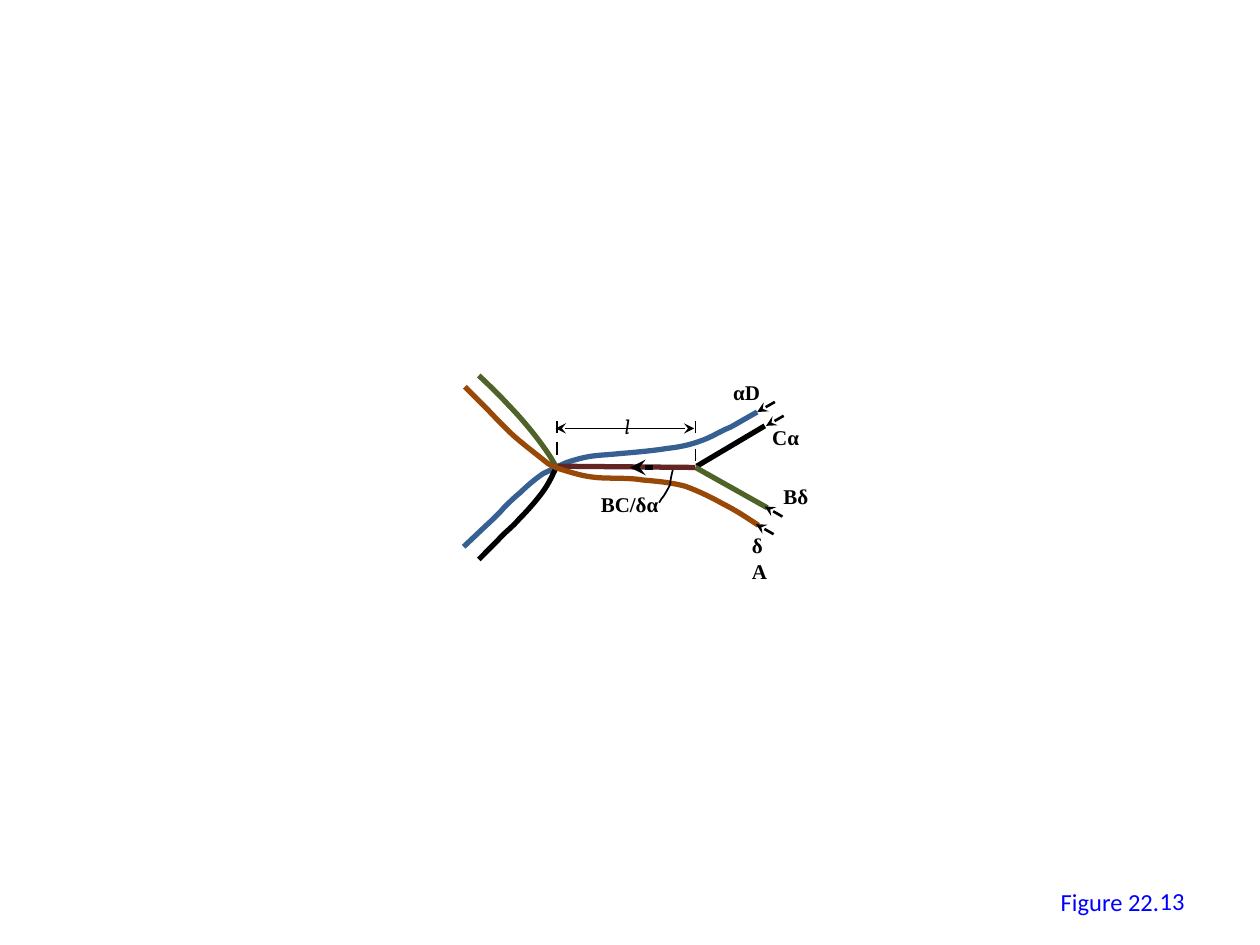
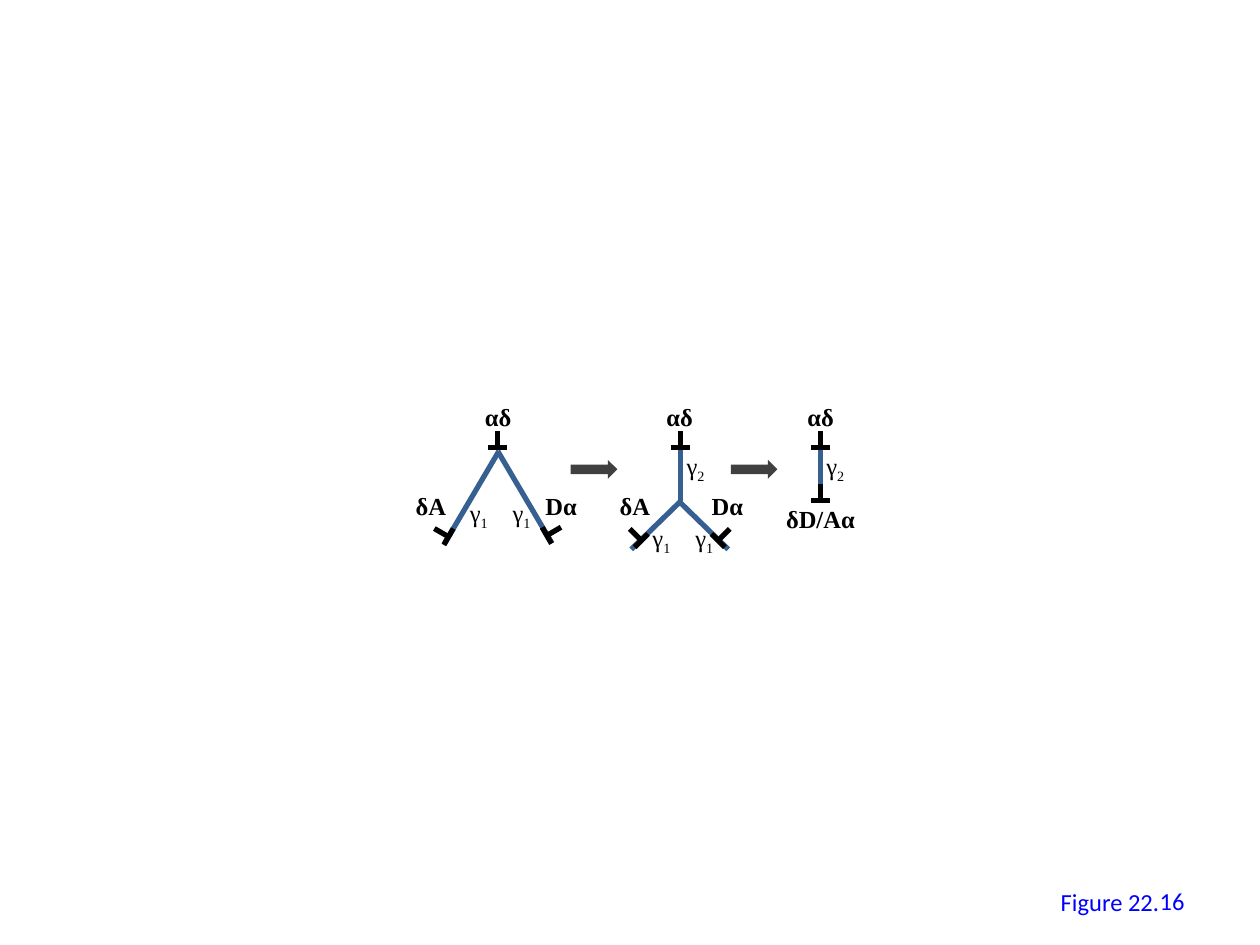
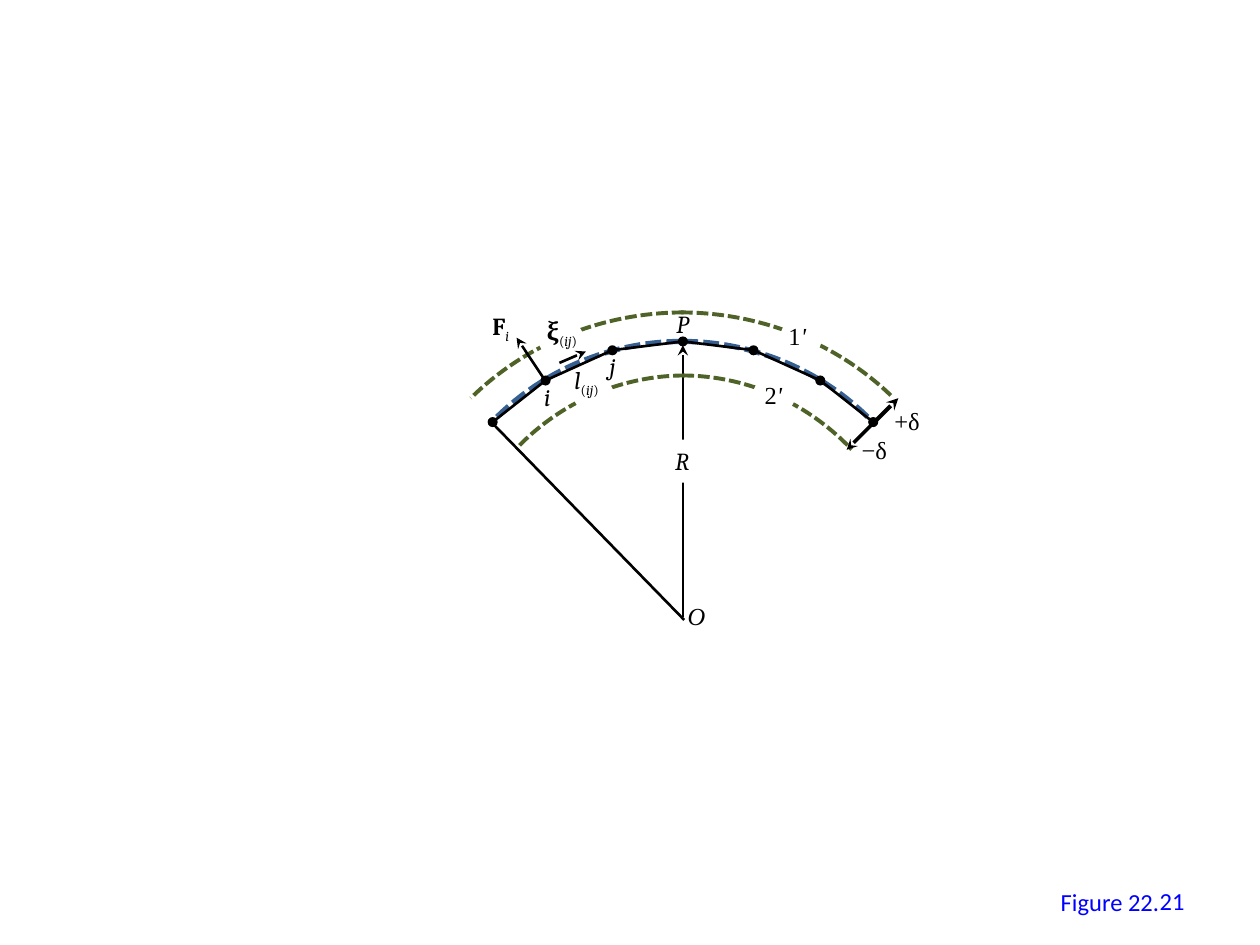
from math import cos, radians, sin

from lxml.etree import SubElement
from pptx import Presentation
from pptx.dml.color import RGBColor
from pptx.enum.dml import MSO_LINE
from pptx.enum.shapes import MSO_CONNECTOR, MSO_SHAPE
from pptx.enum.text import MSO_ANCHOR, MSO_AUTO_SIZE, PP_ALIGN
from pptx.oxml.ns import qn
from pptx.util import Pt

PX = 9144  # EMU; 100 px to the inch
COLORS = {
    "black": "000000", "white": "FFFFFF", "caption": "0000FF", "blue": "376092",
    "green": "4F6228", "brown": "984807", "maroon": "632523", "gray": "404040",
}
TIMES, CAMBRIA, CALIBRI = "Times New Roman", "Cambria", "Calibri"


def color(name):
    return RGBColor.from_string(COLORS[name])


def style_line(line, name, width):
    line.color.rgb = color(name)
    line.width = Pt(width)


def add_line(s, x1, y1, x2, y2, name="black", width=1.5, arrows=()):
    """Straight line; arrows holds "headEnd" (start) and/or "tailEnd" (end)."""
    sp = s.shapes.add_connector(MSO_CONNECTOR.STRAIGHT, *(round(v * PX) for v in (x1, y1, x2, y2)))
    style_line(sp.line, name, width)
    spPr = sp._element.spPr
    for end in arrows:
        SubElement(spPr.find(qn("a:ln")), qn("a:" + end), type="stealth")
    SubElement(spPr, qn("a:effectLst"))
    return sp


def add_arrow(s, x1, y1, x2, y2, width=1.5):
    return add_line(s, x1, y1, x2, y2, width=width, arrows=["tailEnd"])


def add_polyline(s, points, name, width):
    fb = s.shapes.build_freeform(*points[0], scale=PX)
    fb.add_line_segments(points[1:], close=False)
    sp = fb.convert_to_shape()
    sp.shadow.inherit = False
    sp.fill.background()
    style_line(sp.line, name, width)
    return sp


def add_curve(s, points, name, width=3):
    """Bezier chain: a start, then triples of points; a leftover point is a straight end."""
    sp = add_polyline(s, points, name, width)
    segments = list(sp._element.iter(qn("a:lnTo")))
    for i in range(0, len(segments) - 2, 3):
        first, *others = segments[i:i + 3]
        first.tag = qn("a:cubicBezTo")
        for other in others:
            first.append(other[0])
            other.getparent().remove(other)


def add_solid(s, kind, x, y, w, h, name, rotation=0):
    sp = s.shapes.add_shape(kind, x * PX, y * PX, w * PX, h * PX)
    sp.shadow.inherit = False
    sp.fill.solid()
    sp.fill.fore_color.rgb = color(name)
    sp.line.fill.background()
    sp.rotation = rotation


def add_arc(s, x, y, w, h, end, name, width, mirrored=False):
    sp = s.shapes.add_shape(MSO_SHAPE.ARC, x * PX, y * PX, w * PX, h * PX)
    sp.shadow.inherit = False
    sp.fill.background()
    style_line(sp.line, name, width)
    sp.line.dash_style = MSO_LINE.SQUARE_DOT
    sp.adjustments[0], sp.adjustments[1] = 162, end
    if mirrored:
        sp._element.spPr.find(qn("a:xfrm")).set("flipH", "1")


def add_text(s, x, y, w, h, runs, size=14, font=TIMES, name="black", wrap=False):
    """Text box; runs are (text, flags) with b bold, i italic, _ subscript."""
    sp = s.shapes.add_textbox(x * PX, y * PX, w * PX, h * PX)
    tf = sp.text_frame
    tf.word_wrap = wrap
    tf.auto_size = MSO_AUTO_SIZE.NONE if wrap else MSO_AUTO_SIZE.SHAPE_TO_FIT_TEXT
    for text, flags in runs:
        r = tf.paragraphs[0].add_run()
        r.text = text
        r.font.name, r.font.size = font, Pt(size)
        r.font.color.rgb = color(name)
        r.font.bold, r.font.italic = "b" in flags, "i" in flags
        if "_" in flags:
            r.font._element.set("baseline", "-25000")
    return sp


def add_tee(s, x, y, angle):
    """T mark with its bar centred on x, y and its stem pointing along angle."""
    dx, dy = cos(radians(angle)), sin(radians(angle))
    add_line(s, x + 7.5 * dy, y - 7.5 * dx, x - 7.5 * dy, y + 7.5 * dx, width=3)
    add_line(s, x, y, x + 13 * dx, y + 13 * dy, width=3)


def add_slide(prs, number):
    s = prs.slides.add_slide(prs.slide_layouts[6])
    add_text(s, 832, 699, 99, 34, [("Figure 22.", "")], font=CALIBRI, name="caption")
    tf = add_text(s, 717, 695, 233, 40, [(number, "")], font=CALIBRI, name="caption",
                  wrap=True).text_frame
    tf.vertical_anchor = MSO_ANCHOR.MIDDLE
    tf.paragraphs[0].alignment = PP_ALIGN.RIGHT
    return s


def build_junction(prs):
    s = add_slide(prs, "13")
    add_curve(s, [(601, 327), (594, 331), (587, 335), (580, 339), (572, 342), (565, 347), (556, 350),
                  (548, 353), (539, 355), (529, 356), (518, 358), (492, 360), (492, 360),
                  (483, 361), (478, 361), (470, 362), (463, 363), (456, 365), (450, 367),
                  (443, 370), (437, 373), (431, 376), (425, 380), (418, 386), (413, 391),
                  (408, 395), (404, 399), (400, 403), (396, 408), (386, 417), (386, 417),
                  (368, 434)], "blue")
    add_line(s, 607, 338, 553, 370, width=3)
    add_curve(s, [(441, 372), (438, 378), (436, 383), (431, 390), (426, 397), (418, 406), (412, 412),
                  (406, 419), (400, 423), (395, 429), (390, 434), (380, 444), (380, 444)], "black")
    add_line(s, 609, 403, 552, 371, "green", 3)
    add_line(s, 552, 371, 442, 370, "maroon", 3)
    add_curve(s, [(441, 370), (438, 364), (434, 358), (428, 350), (422, 342), (412, 330), (404, 322),
                  (396, 313), (380, 298), (380, 298)], "green")
    add_curve(s, [(602, 417), (593, 411), (584, 405), (574, 400), (565, 395), (555, 390), (544, 386),
                  (533, 383), (522, 382), (510, 381), (499, 379), (483, 380), (473, 379),
                  (463, 378), (457, 376), (450, 374), (444, 372), (442, 372), (435, 368),
                  (429, 363), (417, 354), (409, 347), (401, 340), (387, 325), (387, 325),
                  (369, 307)], "brown")

    add_line(s, 441, 340, 551, 340, width=1, arrows=["headEnd", "tailEnd"])
    for x, y in [(442, 334), (552, 334), (442, 351), (552, 356)]:
        add_line(s, x, y + 10, x, y, width=1)
    for x, y, dy in [(601, 327, -8), (608, 338, -8), (607, 402, 8), (600, 416, 8)]:
        add_arrow(s, x + 14, y + dy, x, y)
    add_arrow(s, 518, 371, 500, 371, 3)
    add_curve(s, [(534, 373), (533, 377), (532, 381), (532, 384), (531, 387), (530, 388), (529, 390),
                  (528, 392), (526, 395), (525, 396), (524, 398), (523, 399), (523, 399)],
              "black", 1)

    add_text(s, 486, 323, 29, 30, [("l", "i")], 12, CAMBRIA)
    for x, y, w, label in [(572, 296, 42, "αD"), (612, 379, 40, "Bδ"), (603, 332, 42, "Cα"),
                           (587, 418, 40, "δA"), (467, 385, 66, "BC/δα")]:
        add_text(s, x, y, w, 30, [(label, "b")], 12, wrap=label == "δA")


def build_splitting(prs):
    s = add_slide(prs, "16")
    for ends in [(540, 355, 540, 398), (651, 386, 651, 355), (396, 358, 353, 431),
                 (395, 358, 438, 431), (540, 398, 501, 436), (539, 398, 578, 436)]:
        add_line(s, *ends, "blue", 3)
    for x, y, angle in [(395, 355, -90), (540, 355, -90), (651, 355, -90), (651, 397, -90),
                        (356, 426, -150), (434, 425, -30), (509, 429, -135), (570, 429, -45)]:
        add_tee(s, x, y, angle)
    for x in (453, 580):
        add_solid(s, MSO_SHAPE.RIGHT_ARROW, x, 365, 37, 15, "gray")
    for x, y, index in [(363, 390, "1"), (397, 390, "1"), (508, 410, "1"), (542, 410, "1"),
                        (535, 353, "2"), (646, 353, "2")]:
        add_text(s, x, y, 35, 34, [("γ", ""), (index, "_")])
    for x, y, w, label in [(375, 314, 41, "αδ"), (519, 314, 41, "αδ"), (631, 314, 41, "αδ"),
                           (320, 385, 44, "δA"), (482, 385, 44, "δA"), (614, 395, 75, "δD/Aα"),
                           (555, 385, 45, "Dα"), (423, 385, 45, "Dα")]:
        add_text(s, x, y, w, 34, [(label, "b")])


def build_arc(prs):
    s = add_slide(prs, "21")
    half = [(56, 278), (109, 302), (151, 335)]
    nodes = ([(542 - dx, y) for dx, y in reversed(half)] + [(542, 271)]
             + [(542 + dx, y) for dx, y in half])

    add_arc(s, 331, 271, 421, 421, 189.84, "blue", 3)
    add_arc(s, 331, 271, 421, 421, 189.63, "blue", 3, mirrored=True)
    add_arrow(s, 542, 490, 542, 274)
    add_line(s, 388, 333, 543, 492)
    for x, y in nodes:
        add_solid(s, MSO_SHAPE.OVAL, x - 4, y - 4, 8, 8, "black")
    add_arrow(s, 693, 336, 713, 316, 2.25)
    add_arc(s, 352, 298, 379, 398, 188.27, "green", 2.25)
    add_arc(s, 354, 298, 379, 398, 187.98, "green", 2.25, mirrored=True)
    add_arc(s, 307, 248, 467, 440, 190.73, "green", 2.25)
    add_arc(s, 309, 248, 467, 440, 190.81, "green", 2.25, mirrored=True)
    add_polyline(s, nodes, "black", 1.5)
    add_arrow(s, 692, 337, 672, 357, 2)
    add_arrow(s, 444, 288, 465, 279)

    for x, y, w, h, rotation in [(423, 245, 35, 31, 330.6), (456, 302, 35, 31, 59.1),
                                 (620, 257, 33, 19, 22.8), (598, 304, 33, 19, 27.5)]:
        add_solid(s, MSO_SHAPE.RECTANGLE, x, y, w, h, "white", rotation)
    add_arrow(s, 432, 301, 410, 268)

    radius = add_text(s, 526, 349, 37, 34, [("R", "i")], font=CAMBRIA)
    radius.fill.solid()
    radius.fill.fore_color.rgb = color("white")
    pair = [("(", "_"), ("ij", "i_"), (")", "_")]
    for x, y, w, runs in [(527, 240, 37, [("P", "i")]), (422, 298, 31, [("i", "i")]),
                          (474, 274, 34, [("j", "i")]), (424, 246, 46, [("ξ", "b")] + pair),
                          (446, 285, 44, [("l", "i")] + pair),
                          (381, 242, 37, [("F", "b"), ("i", "i_")])]:
        add_text(s, x, y, w, 34, runs, font=CAMBRIA)
    for x, y, w, runs in [(700, 317, 41, [("+δ", "")]), (674, 340, 41, [("−δ", "")]),
                          (536, 472, 41, [("O", "i")]), (616, 250, 36, [("1", ""), ("'", "i")]),
                          (597, 297, 36, [("2", ""), ("'", "i")])]:
        add_text(s, x, y, w, 34, runs)


def main():
    prs = Presentation()
    prs.slide_width, prs.slide_height = 1000 * PX, 750 * PX
    build_junction(prs)
    build_splitting(prs)
    build_arc(prs)
    prs.save("out.pptx")


if __name__ == "__main__":
    main()
